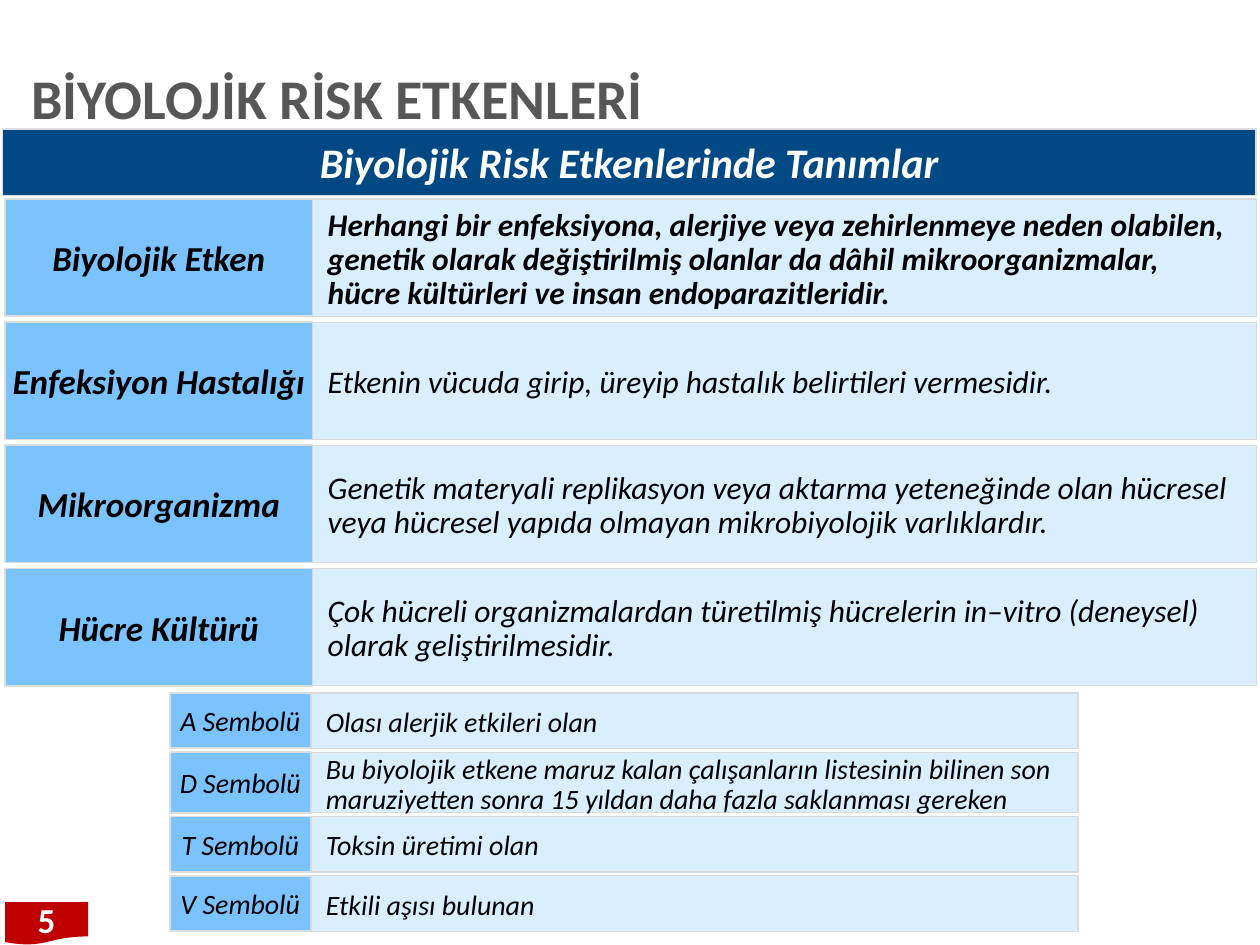
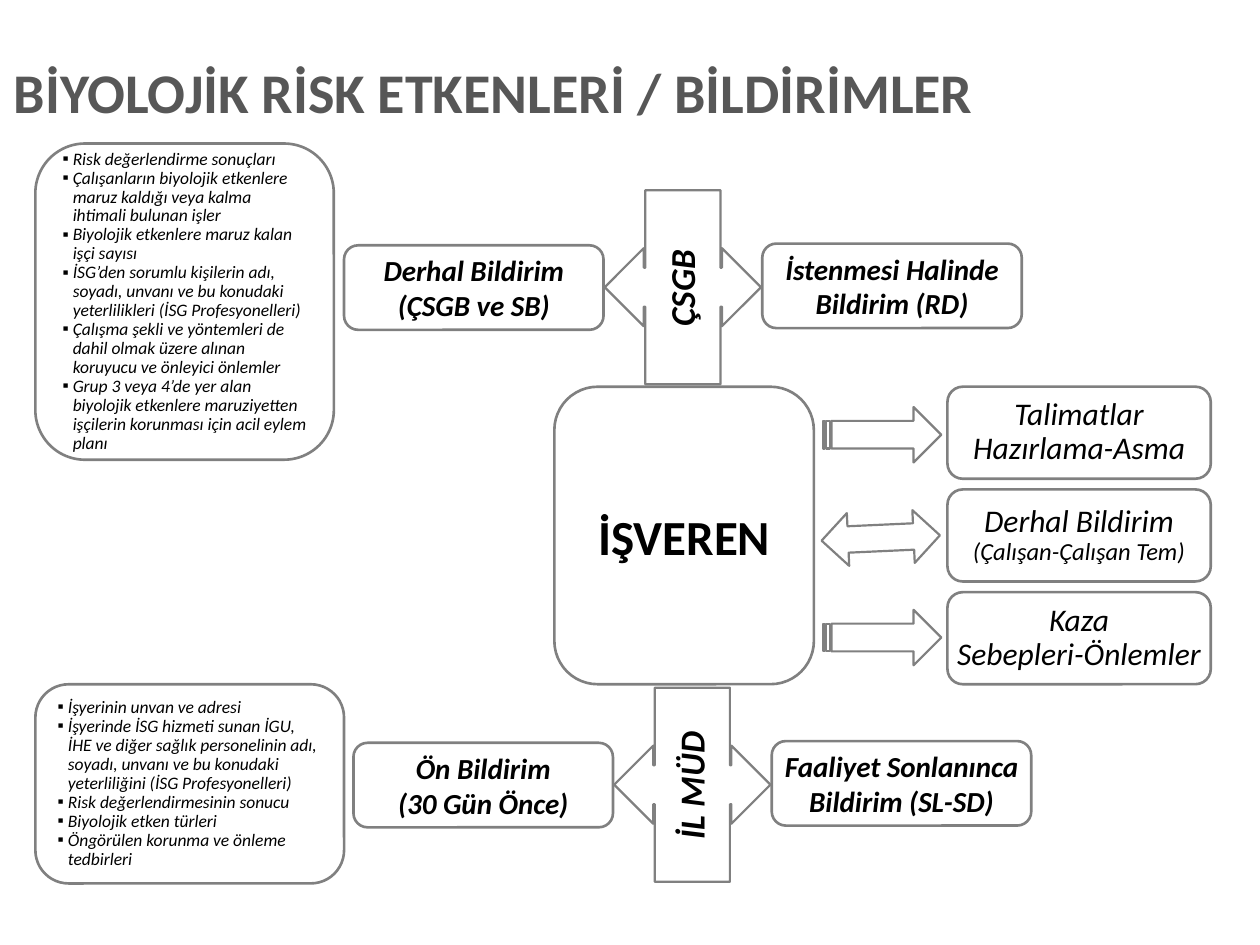
from lxml.etree import SubElement
from pptx import Presentation
from pptx.dml.color import RGBColor
from pptx.enum.shapes import MSO_SHAPE
from pptx.enum.text import MSO_ANCHOR, MSO_AUTO_SIZE, PP_ALIGN
from pptx.oxml.ns import qn
from pptx.util import Pt

FONT = "Calibri"
GREY, BLACK, WHITE = "575757", "000000", "FFFFFF"
NAVY, SKY, PALE, RED = "004985", "7AC3FF", "BDE1FF", "C00000"
CELL_LINE, TEXT_LINE, OUTLINE = "DDDDDD", "D9D9D9", "808080"
CORNER_INSET = 0.049

DEFINITIONS = [
    ("Biyolojik Etken",
     "Herhangi bir enfeksiyona, alerjiye veya zehirlenmeye neden olabilen, genetik olarak "
     "değiştirilmiş olanlar da dâhil mikroorganizmalar, hücre kültürleri ve insan "
     "endoparazitleridir."),
    ("Enfeksiyon Hastalığı", "Etkenin vücuda girip, üreyip hastalık belirtileri vermesidir."),
    ("Mikroorganizma",
     "Genetik materyali replikasyon veya aktarma yeteneğinde olan hücresel veya hücresel "
     "yapıda olmayan mikrobiyolojik varlıklardır."),
    ("Hücre Kültürü",
     "Çok hücreli organizmalardan türetilmiş hücrelerin in–vitro (deneysel) olarak "
     "geliştirilmesidir."),
]

SYMBOLS = [
    ("A Sembolü", "Olası alerjik etkileri olan", 31.7),
    ("D Sembolü",
     "Bu biyolojik etkene maruz kalan çalışanların listesinin bilinen son maruziyetten "
     "sonra 15 yıldan daha fazla saklanması gereken", 34.5),
    ("T Sembolü", "Toksin üretimi olan", 31.7),
    ("V Sembolü", "Etkili aşısı bulunan", 31.7),
]

MINISTRY_LIST = [
    "Risk değerlendirme sonuçları",
    "Çalışanların biyolojik etkenlere maruz kaldığı veya kalma ihtimali bulunan işler",
    "Biyolojik etkenlere maruz kalan işçi sayısı",
    "İSG’den sorumlu kişilerin adı, soyadı, unvanı ve bu konudaki yeterlilikleri "
    "(İSG Profesyonelleri)",
    "Çalışma şekli ve yöntemleri de dahil olmak üzere alınan koruyucu ve önleyici önlemler",
    "Grup 3 veya 4’de yer alan biyolojik etkenlere maruziyetten işçilerin korunması için "
    "acil eylem planı",
]

PROVINCE_LIST = [
    "İşyerinin unvan ve adresi",
    "İşyerinde İSG hizmeti sunan İGU, İHE ve diğer sağlık personelinin adı, soyadı, unvanı "
    "ve bu konudaki yeterliliğini (İSG Profesyonelleri)",
    "Risk değerlendirmesinin sonucu",
    "Biyolojik etken türleri",
    "Öngörülen korunma ve önleme tedbirleri",
]

EMPLOYEE_DUTIES = [
    ("Talimatlar\nHazırlama-Asma", 18),
    ("Derhal Bildirim\n(Çalışan-Çalışan Tem)", 14),
    ("Kaza\nSebepleri-Önlemler", 18),
]


def color(hex_text):
    return RGBColor.from_string(hex_text)


def set_margins(frame, left=0, top=0, right=0, bottom=0):
    frame.margin_left, frame.margin_top = Pt(left), Pt(top)
    frame.margin_right, frame.margin_bottom = Pt(right), Pt(bottom)


def format_para(para, size, hex_text=BLACK, bold=False, italic=False,
                align=PP_ALIGN.LEFT, spacing=1.0):
    para.alignment = align
    para.line_spacing = spacing
    for span in para.runs:
        span.font.name = FONT
        span.font.size = Pt(size)
        span.font.bold = bold
        span.font.italic = italic
        span.font.color.rgb = color(hex_text)


def write(frame, text, size, **style):
    frame.text = text
    for para in frame.paragraphs:
        format_para(para, size, **style)


def add_box(shapes, kind, left, top, width, height, fill=None, line=None, weight=1):
    box = shapes.add_shape(kind, Pt(left), Pt(top), Pt(width), Pt(height))
    box.shadow.inherit = False
    if fill:
        box.fill.solid()
        box.fill.fore_color.rgb = color(fill)
    else:
        box.fill.background()
    if line:
        box.line.color.rgb = color(line)
        box.line.width = Pt(weight)
    else:
        box.line.fill.background()
    box.text_frame.vertical_anchor = MSO_ANCHOR.MIDDLE
    return box


def add_title(slide, text, left, top):
    title = slide.shapes.title
    title.left, title.top, title.width, title.height = Pt(left), Pt(top), Pt(694), Pt(51)
    frame = title.text_frame
    frame.auto_size = MSO_AUTO_SIZE.NONE
    frame.vertical_anchor = MSO_ANCHOR.MIDDLE
    set_margins(frame, top=3.6, bottom=3.6)
    write(frame, text, 32, hex_text=GREY, bold=True, spacing=0.9)


def add_label_cell(slide, text, left, top, width, height, size, fill=SKY,
                   hex_text=BLACK, bold=True):
    cell = add_box(slide.shapes, MSO_SHAPE.RECTANGLE, left, top, width, height, fill, CELL_LINE)
    set_margins(cell.text_frame)
    write(cell.text_frame, text, size, hex_text=hex_text, bold=bold, italic=True,
          align=PP_ALIGN.CENTER)


def add_text_cell(slide, text, left, top, width, height, size, bold=False):
    cell = add_box(slide.shapes, MSO_SHAPE.RECTANGLE, left, top, width, height,
                   PALE, TEXT_LINE, 0.75)
    fill_color = cell._element.spPr.find(qn("a:solidFill"))[0]
    SubElement(fill_color, qn("a:alpha")).set("val", "56000")
    set_margins(cell.text_frame, 8.64, 8.64, 11.52, 5.76)
    write(cell.text_frame, text, size, bold=bold, italic=True, spacing=0.9)


def add_page_tag(slide, number):
    tag = add_box(slide.shapes, MSO_SHAPE.FLOWCHART_DOCUMENT, 2.9, 515.5, 47.5, 24.5, RED)
    write(tag.text_frame, number, 20, hex_text=WHITE, bold=True, align=PP_ALIGN.CENTER)


def add_node(slide, text, left, top, width, height, size, **style):
    node = add_box(slide.shapes, MSO_SHAPE.ROUNDED_RECTANGLE, left, top, width, height,
                   line=OUTLINE, weight=1.5)
    node.text_frame.word_wrap = False
    write(node.text_frame, text, size, align=PP_ALIGN.CENTER, **style)
    return node


def add_arrow(slide, kind, left, top, width, height, rotation=0):
    arrow = add_box(slide.shapes, kind, left, top, width, height, line=OUTLINE, weight=1.25)
    arrow.rotation = rotation


def add_bullet(para):
    properties = para._p.get_or_add_pPr()
    properties.set("marL", str(Pt(5.8)))
    properties.set("indent", str(-Pt(5.8)))
    SubElement(properties, qn("a:buFont")).set("typeface", "Arial")
    SubElement(properties, qn("a:buChar")).set("char", "▪")


def add_list_panel(slide, body, items, left, top, width, height):
    add_box(slide.shapes, MSO_SHAPE.ROUNDED_RECTANGLE, left, top, width, height,
            line=OUTLINE, weight=1.5)
    body.left, body.top, body.width, body.height = Pt(left), Pt(top), Pt(width), Pt(height)
    frame = body.text_frame
    frame.auto_size = MSO_AUTO_SIZE.NONE
    frame.vertical_anchor = MSO_ANCHOR.MIDDLE
    side = 7.2 + CORNER_INSET * min(width, height)
    set_margins(frame, left=side, right=side)
    frame.text = "\n".join(items)
    for para in frame.paragraphs:
        add_bullet(para)
        para.space_before = Pt(0)
        format_para(para, 10, italic=True, spacing=0.9)


def add_authority(slide, name, before, after, left, top):
    style = {"bold": True, "italic": True}
    add_node(slide, before, left - 149, top + 31.5, 148.3, 48.3, 16.6, **style)
    add_node(slide, after, left + 90, top + 30.5, 148.3, 48.3, 16.6, **style)
    group = slide.shapes.add_group_shape()
    add_box(group.shapes, MSO_SHAPE.LEFT_RIGHT_ARROW_CALLOUT, left, top, 89.3, 110.9,
            line=OUTLINE, weight=1.25)
    label = group.shapes.add_textbox(Pt(left - 2.5), Pt(top + 40), Pt(92.9), Pt(31.7))
    label.rotation = 270
    label.text_frame.word_wrap = True
    write(label.text_frame, name, 20, align=PP_ALIGN.CENTER, **style)


def build_definitions(deck):
    slide = deck.slides.add_slide(deck.slide_layouts.get_by_name("Title Only"))
    add_title(slide, "BİYOLOJİK RİSK ETKENLERİ", 18, 32.4)
    add_page_tag(slide, "5")
    for index, (term, meaning) in enumerate(DEFINITIONS):
        top = 113.8 + 70.35 * index
        add_label_cell(slide, term, 2.9, top, 175.7, 67, 20)
        add_text_cell(slide, meaning, 178.6, top, 539.3, 67, 18, bold=index == 0)
    add_label_cell(slide, "Biyolojik Risk Etkenlerinde Tanımlar", 1.4, 73.6, 716.4, 38.2, 24,
                   fill=NAVY, hex_text=WHITE)
    top = 396
    for symbol, meaning, height in SYMBOLS:
        add_label_cell(slide, symbol, 97, top, 80.6, height, 16, bold=False)
        add_text_cell(slide, meaning, 177.6, top, 438.5, height, 16)
        top += height + 2.2


def build_notifications(deck):
    slide = deck.slides.add_slide(deck.slide_layouts.get_by_name("Two Content"))
    ministry_body, province_body = list(slide.placeholders)[1:]
    add_title(slide, "BİYOLOJİK RİSK ETKENLERİ / BİLDİRİMLER", 7.9, 28.8)
    add_node(slide, "İŞVEREN", 316.8, 221, 148.3, 170, 28, bold=True)
    for index, (duty, second_size) in enumerate(EMPLOYEE_DUTIES):
        node = add_node(slide, duty, 541.4, 221 + 58.7 * index, 150.5, 52.6, 18,
                        italic=True, spacing=0.9)
        node.text_frame.paragraphs[1].runs[0].font.size = Pt(second_size)
    for top in (232.6, 348.5):
        add_arrow(slide, MSO_SHAPE.STRIPED_RIGHT_ARROW, 470.2, top, 67.7, 31.7)
    add_arrow(slide, MSO_SHAPE.UP_DOWN_ARROW, 488.2, 273.6, 30.2, 67.7, 87.4)
    add_authority(slide, "ÇSGB", "Derhal Bildirim\n(ÇSGB ve SB)",
                  "İstenmesi Halinde\nBildirim (RD)", 345.6, 108.7)
    add_authority(slide, "İL MÜD", "Ön Bildirim\n(30 Gün Önce)",
                  "Faaliyet Sonlanınca\nBildirim (SL-SD)", 351, 393)
    add_list_panel(slide, ministry_body, MINISTRY_LIST, 20.2, 82, 170.6, 180.7)
    add_list_panel(slide, province_body, PROVINCE_LIST, 20.2, 391, 176.4, 113.8)


def main():
    deck = Presentation()
    deck.slide_width, deck.slide_height = Pt(720), Pt(540)
    build_definitions(deck)
    build_notifications(deck)
    deck.save("out.pptx")


if __name__ == "__main__":
    main()
